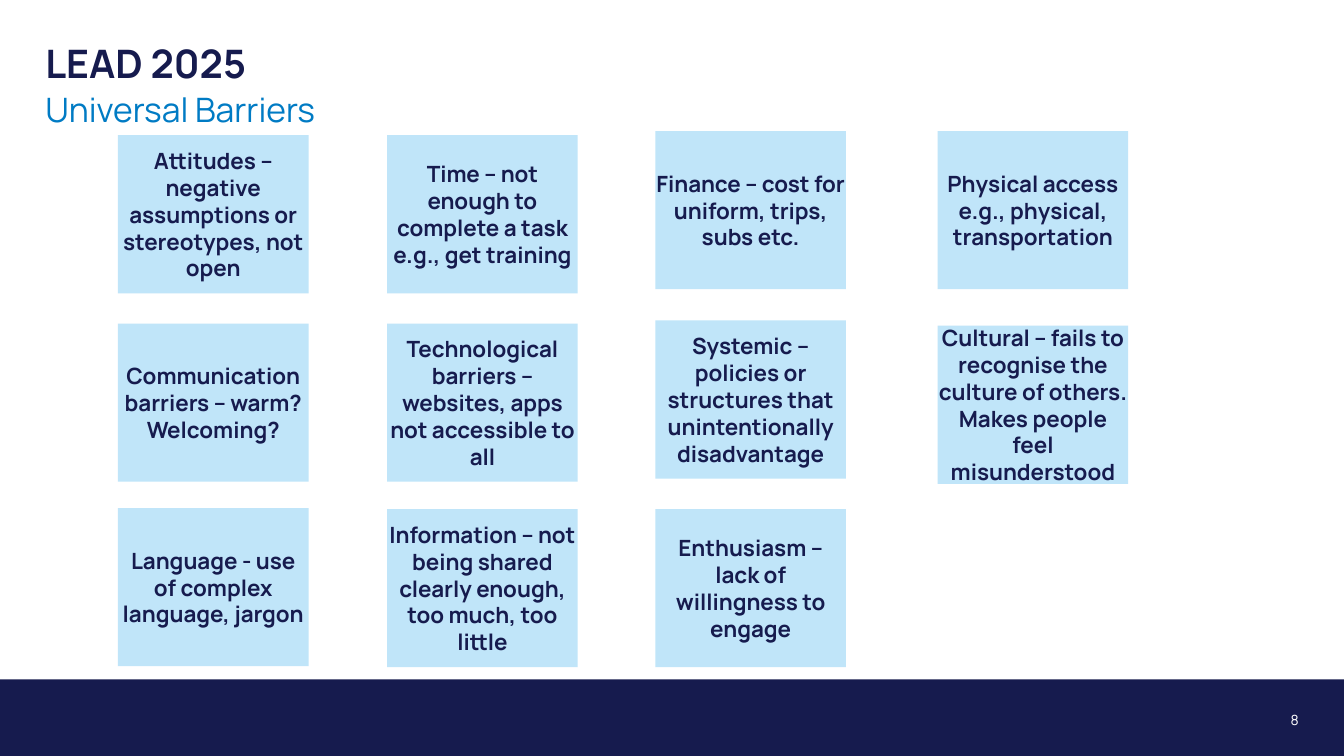
from pptx import Presentation
from pptx.dml.color import RGBColor
from pptx.enum.shapes import MSO_SHAPE
from pptx.enum.text import MSO_ANCHOR, PP_ALIGN
from pptx.util import Inches, Pt

NAVY, BLUE, PALE, WHITE = "161B4E", "007BC4", "C0E5F9", "FFFFFF"
LEFTS = (1.17, 3.84, 6.5, 9.3)

# Each row holds (top, text) for its cards, from left to right
BARRIERS = (
    (
        (1.34, "Attitudes – negative assumptions or stereotypes, not open"),
        (1.34, "Time – not enough to complete a task e.g., get training"),
        (1.3, "Finance – cost for uniform, trips, subs etc."),
        (1.3, "Physical access e.g., physical, transportation"),
    ),
    (
        (3.21, "Communication barriers – warm? Welcoming?"),
        (3.21, "Technological barriers – websites, apps not accessible to all"),
        (3.18, "Systemic – policies or structures that unintentionally disadvantage"),
        (3.23, "Cultural – fails to recognise the culture of others. "
               "Makes people feel misunderstood"),
    ),
    (
        (5.04, "Language - use of complex language, jargon"),
        (5.05, "Information – not being shared clearly enough, too much, too little"),
        (5.05, "Enthusiasm – lack of willingness to engage"),
    ),
)


def color(code):
    return RGBColor.from_string(code)


class Board:
    def __init__(self, slide, font):
        self.slide = slide
        self.font = font

    def set_text(self, shape, text, size, tint, bold=False,
                 align=PP_ALIGN.LEFT, anchor=MSO_ANCHOR.TOP):
        """Fill a shape with one paragraph, without margins."""
        frame = shape.text_frame
        frame.word_wrap = True
        frame.vertical_anchor = anchor
        frame.margin_left = frame.margin_right = 0
        frame.margin_top = frame.margin_bottom = 0
        para = frame.paragraphs[0]
        para.text = text
        para.alignment = align
        para.font.name = self.font
        para.font.size = Pt(size)
        para.font.bold = bold
        para.font.color.rgb = color(tint)
        return para

    def rect(self, left, top, width, height, fill):
        shape = self.slide.shapes.add_shape(
            MSO_SHAPE.RECTANGLE, Inches(left), Inches(top),
            Inches(width), Inches(height))
        shape.shadow.inherit = False
        shape.fill.solid()
        shape.fill.fore_color.rgb = color(fill)
        shape.line.fill.background()
        return shape

    def card(self, left, top, text):
        shape = self.rect(left, top, 1.89, 1.57, PALE)
        self.set_text(shape, text, 16, NAVY, True,
                      PP_ALIGN.CENTER, MSO_ANCHOR.MIDDLE)

    def label(self, left, top, width, height, text, size, tint, **style):
        box = self.slide.shapes.add_textbox(
            Inches(left), Inches(top), Inches(width), Inches(height))
        return self.set_text(box, text, size, tint, **style)


def main():
    deck = Presentation()
    deck.slide_width, deck.slide_height = Inches(13.33), Inches(7.5)
    board = Board(deck.slides.add_slide(deck.slide_layouts[6]), "Manrope")

    board.rect(0, 6.74, 13.33, 0.76, NAVY)
    for row in BARRIERS:
        for left, (top, text) in zip(LEFTS, row):
            board.card(left, top, text)

    title = board.label(0.45, 0.44, 12.44, 0.43, "LEAD 2025", 28, NAVY, bold=True)
    title.line_spacing = 0.9
    board.label(0.45, 0.88, 12.44, 0.43, "Universal Barriers", 24, BLUE)
    board.label(12.42, 7.03, 0.46, 0.23, "8", 10, WHITE,
                align=PP_ALIGN.RIGHT, anchor=MSO_ANCHOR.MIDDLE)
    deck.save("out.pptx")


if __name__ == "__main__":
    main()
